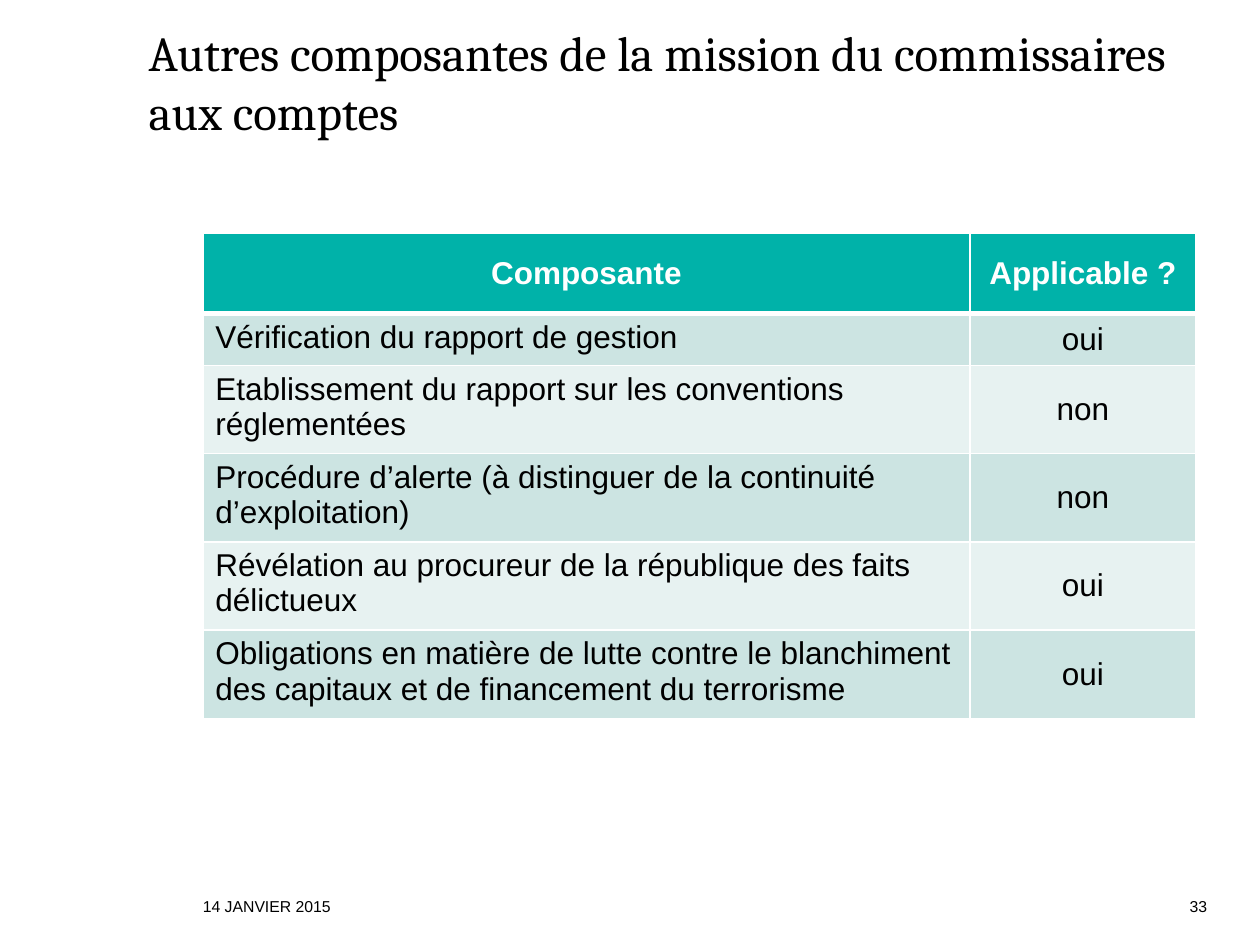
from lxml import etree
from pptx import Presentation
from pptx import util as u
from pptx.dml.color import RGBColor
from pptx.enum import text
from pptx.oxml.ns import qn

TEAL = RGBColor(0x00, 0xB2, 0xA9)
MINT = RGBColor(0xCC, 0xE4, 0xE2)
PALE = RGBColor(0xE7, 0xF2, 0xF1)
WHITE = RGBColor(0xFF, 0xFF, 0xFF)
BLACK = RGBColor(0x00, 0x00, 0x00)

LEFT, MID, RIGHT = text.PP_ALIGN.LEFT, text.PP_ALIGN.CENTER, text.PP_ALIGN.RIGHT
COLS, ROWS = 100, 75  # grid of the slide

HEAD = ("Composante", "Applicable ?")
ITEMS = [
    ("Vérification du rapport de gestion", "oui"),
    ("Etablissement du rapport sur les conventions réglementées", "non"),
    ("Procédure d’alerte (à distinguer de la continuité d’exploitation)", "non"),
    ("Révélation au procureur de la république des faits délictueux", "oui"),
    ("Obligations en matière de lutte contre le blanchiment des capitaux "
     "et de financement du terrorisme", "oui"),
]


class Deck:
    def __init__(self):
        self.prs = Presentation()
        self.prs.slide_width, self.prs.slide_height = u.Inches(10), u.Inches(7.5)
        self.slide = self.prs.slides.add_slide(self.prs.slide_layouts[6])

    def x(self, cols):
        return round(self.prs.slide_width * cols / COLS)

    def y(self, rows):
        return round(self.prs.slide_height * rows / ROWS)

    def area(self, left, top, width, height):
        return self.x(left), self.y(top), self.x(width), self.y(height)

    def add_run(self, frame, words, size, font="Arial", color=BLACK,
                align=LEFT, bold=False):
        para = frame.paragraphs[0]
        para.alignment = align
        run = para.add_run()
        run.text = words
        run.font.size, run.font.name, run.font.bold = u.Pt(size), font, bold
        run.font.color.rgb = color

    def label(self, words, area, size, **style):
        frame = self.slide.shapes.add_textbox(*self.area(*area)).text_frame
        frame.word_wrap = True
        frame.vertical_anchor = text.MSO_ANCHOR.BOTTOM
        frame.margin_left = frame.margin_right = 0
        frame.margin_top = frame.margin_bottom = 0
        self.add_run(frame, words, size, **style)

    def border(self, cell, widths):
        # Cell lines must come before the cell fill
        props = cell._tc.get_or_add_tcPr()
        for side, width in widths.items():
            line = etree.SubElement(props, qn("a:ln" + side), w=str(u.Pt(width)))
            fill = etree.SubElement(line, qn("a:solidFill"))
            etree.SubElement(fill, qn("a:srgbClr"), val=str(WHITE))

    def cell(self, cell, words, fill, widths, center, **style):
        self.border(cell, widths)
        cell.fill.solid()
        cell.fill.fore_color.rgb = fill
        if center:
            cell.vertical_anchor = text.MSO_ANCHOR.MIDDLE
        self.add_run(cell.text_frame, words, 18,
                     align=MID if center else LEFT, **style)

    def table(self, head, items, area, widths, heights):
        shape = self.slide.shapes.add_table(
            len(items) + 1, len(head), *self.area(*area))
        grid = shape.table
        for col, width in zip(grid.columns, widths):
            col.width = self.x(width)
        for row, height in zip(grid.rows, heights):
            row.height = self.y(height)
        shape.height = self.y(area[3])

        # Header row
        for c, words in enumerate(head):
            self.cell(grid.cell(0, c), words, TEAL, {"L": 1, "R": 1, "T": 1, "B": 3},
                      True, color=WHITE, bold=True)
        # Banded rows
        for r, item in enumerate(items, 1):
            for c, words in enumerate(item):
                self.cell(grid.cell(r, c), words, MINT if r % 2 else PALE,
                          {"L": 1, "R": 1, "B": 1}, c > 0)


def main():
    deck = Deck()
    # Title
    deck.label("Autres composantes de la mission du commissaires aux comptes",
               (11.8, 0, 82.5, 11.1), 28, font="Cambria")
    # Table of components
    deck.table(HEAD, ITEMS, (16.1, 18.5, 78.7, 38.4), (60.9, 17.9),
               [6.4] + [4.1] * len(ITEMS))
    # Footer
    deck.label("14 JANVIER 2015", (16.1, 70.7, 70.9, 2), 9)
    deck.label("33", (87.8, 70.7, 8, 2), 9, align=RIGHT)
    deck.prs.save("out.pptx")


if __name__ == "__main__":
    main()
